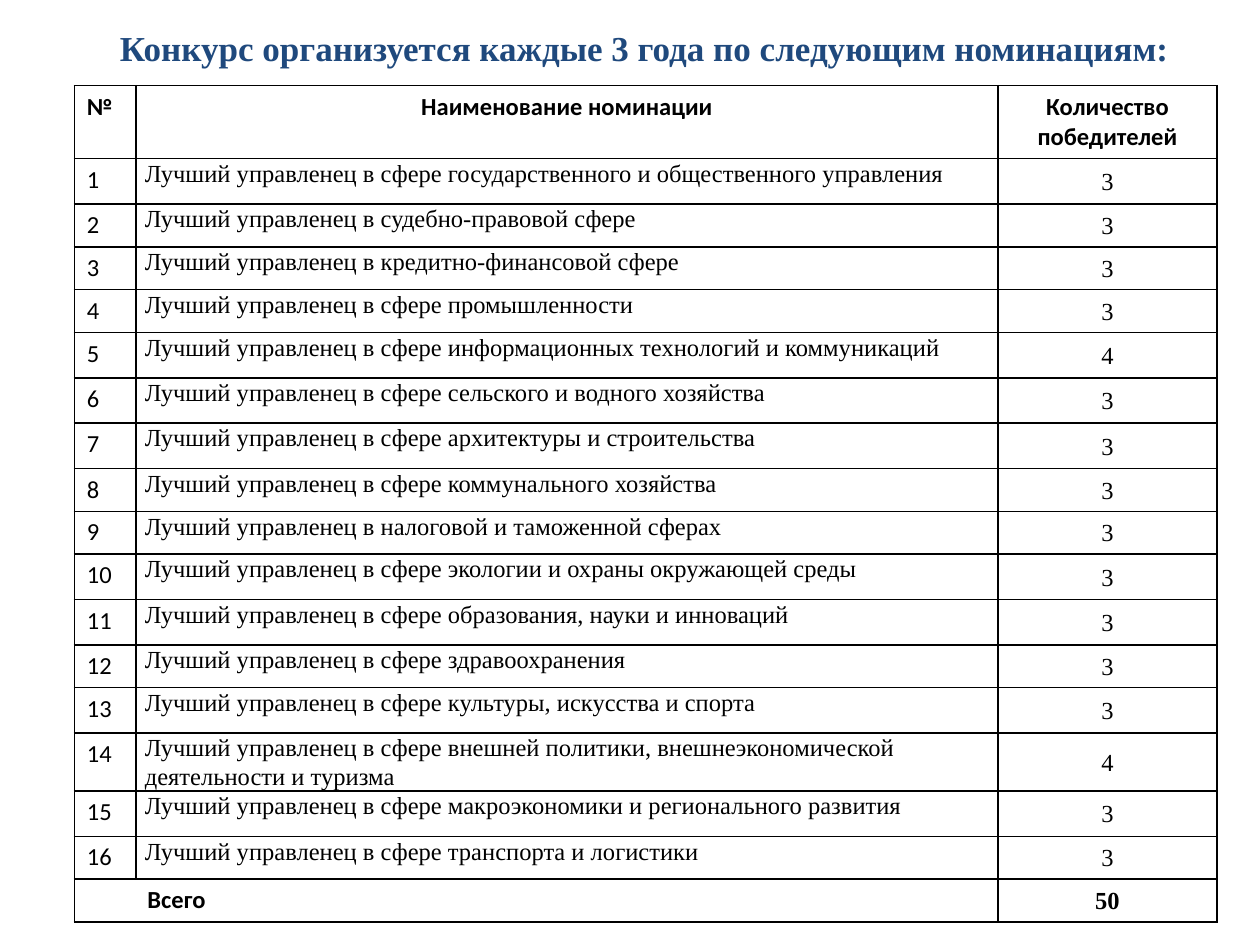
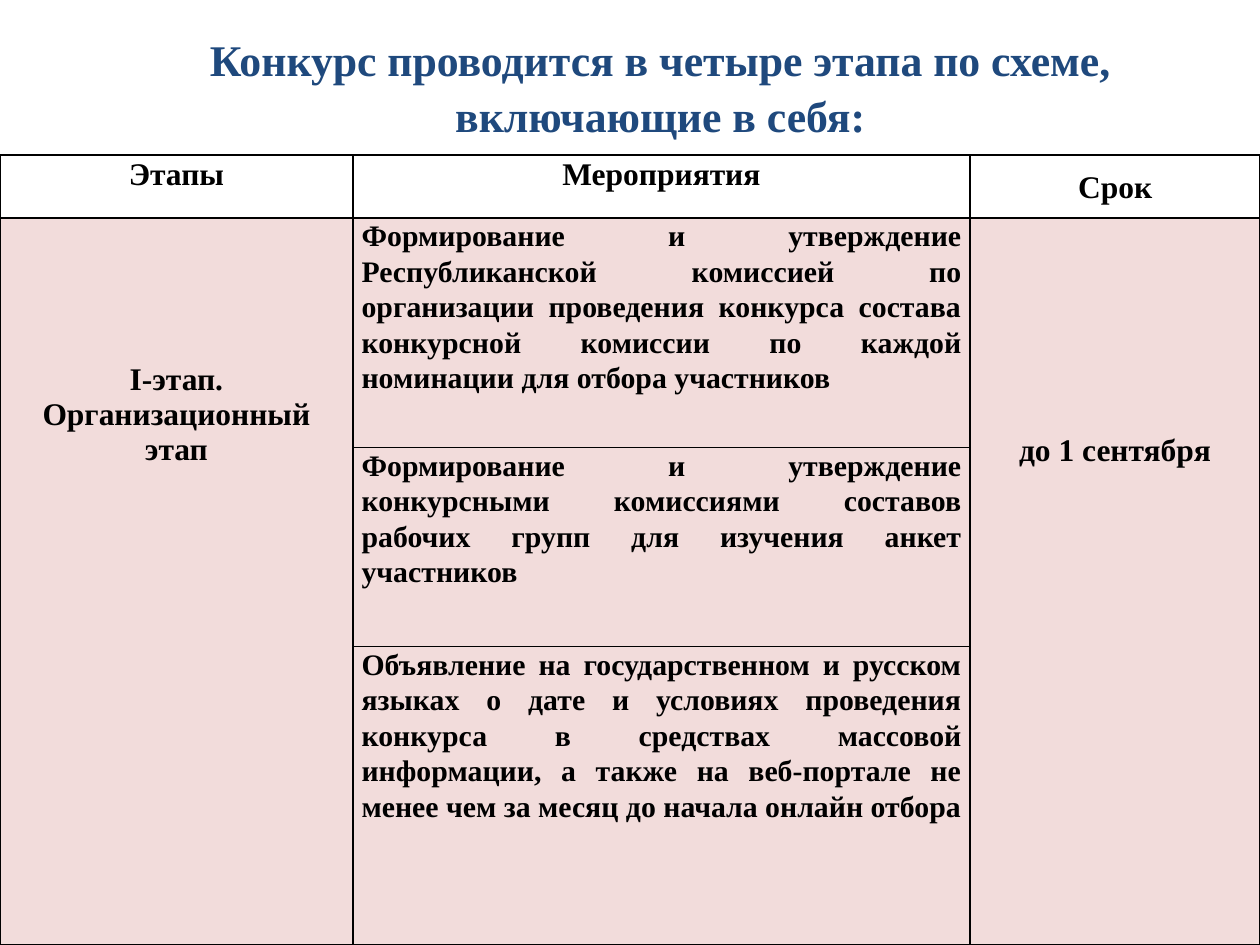
from pptx import Presentation
from pptx.dml.color import RGBColor
from pptx.enum.text import MSO_ANCHOR as Anchor, MSO_AUTO_SIZE as AutoSize, PP_ALIGN as Align
from pptx.oxml import parse_xml
from pptx.oxml.ns import nsdecls
from pptx.util import Inches, Pt

# Shared look
BLACK = RGBColor(0x00, 0x00, 0x00)
NAVY = RGBColor(0x1F, 0x49, 0x7D)
PINK = RGBColor(0xF2, 0xDC, 0xDB)
SERIF, SANS = "Times New Roman", "Calibri"
TIGHT = (0.07, 0, 0.07, 0)
ROOMY = (0.1, 0.05, 0.1, 0.05)

# Slide 1: nominations
NOMINATIONS_TITLE = "Конкурс организуется каждые 3 года по cледующим номинациям:"
NOMINATIONS_HEADER = ("№", "Наименование номинации", "Количество победителей")
NOMINATIONS = [  # name, winners, row height
    ("Лучший управленец в сфере государственного и общественного управления", 3, 0.36),
    ("Лучший управленец в судебно-правовой сфере", 3, 0.34),
    ("Лучший управленец в кредитно-финансовой сфере", 3, 0.34),
    ("Лучший управленец в сфере промышленности", 3, 0.34),
    ("Лучший управленец в сфере информационных технологий и коммуникаций", 4, 0.36),
    ("Лучший управленец в сфере сельского и водного хозяйства", 3, 0.36),
    ("Лучший управленец в сфере архитектуры и строительства", 3, 0.36),
    ("Лучший управленец в сфере коммунального хозяйства", 3, 0.34),
    ("Лучший управленец в налоговой и таможенной сферах", 3, 0.34),
    ("Лучший управленец в сфере экологии и охраны окружающей среды", 3, 0.36),
    ("Лучший управленец в сфере образования, науки и инноваций", 3, 0.36),
    ("Лучший управленец в сфере здравоохранения", 3, 0.34),
    ("Лучший управленец в сфере культуры, искусства и спорта", 3, 0.36),
    ("Лучший управленец в сфере внешней политики, внешнеэкономической "
     "деятельности и туризма", 4, 0.46),
    ("Лучший управленец в сфере макроэкономики и регионального развития", 3, 0.36),
    ("Лучший управленец в сфере транспорта и логистики", 3, 0.34),
]
TOTAL_LABEL = "Всего"

# Slide 2: stages
STAGES_TITLE = "Конкурс проводится в четыре этапа по схеме, включающие в себя:"
STAGES_HEADER = ("Этапы", "Мероприятия", "Срок")
STAGE = "I-этап.\nОрганизационный этап"
DEADLINE = "до 1 сентября"
ACTIVITIES = [
    "Формирование и утверждение Республиканской комиссией по организации проведения "
    "конкурса состава конкурсной комиссии по каждой номинации для отбора участников",
    "Формирование и утверждение конкурсными комиссиями составов рабочих групп "
    "для изучения анкет участников",
    "Объявление на государственном и русском языках о дате и условиях проведения конкурса "
    "в средствах массовой информации, а также на веб-портале не менее чем за месяц "
    "до начала онлайн отбора",
]


def style_font(font, name, size, color, bold):
    font.name, font.size, font.bold = name, Pt(size), bold
    font.color.rgb = color


def add_titled_slide(deck, title, bounds, size, anchor=Anchor.MIDDLE, spacing=1.0):
    slide = deck.slides.add_slide(deck.slide_layouts[5])
    box = slide.shapes.title
    box.left, box.top, box.width, box.height = map(Inches, bounds)
    frame = box.text_frame
    frame.text = title
    frame.word_wrap, frame.auto_size = True, AutoSize.NONE
    frame.vertical_anchor = anchor
    frame.margin_top = frame.margin_bottom = 0
    para = frame.paragraphs[0]
    para.alignment, para.line_spacing = Align.CENTER, spacing
    style_font(para.font, SERIF, size, NAVY, True)
    return slide


def add_grid(slide, left, top, widths, heights):
    """Add an unfilled table with thin black borders."""
    frame = slide.shapes.add_table(len(heights), len(widths), Inches(left), Inches(top),
                                   Inches(sum(widths)), Inches(sum(heights)))
    table = frame.table
    table.first_row = table.horz_banding = False
    for column, width in zip(table.columns, widths):
        column.width = Inches(width)
    for row, height in zip(table.rows, heights):
        row.height = Inches(height)
    for cell in table.iter_cells():
        properties = cell._tc.get_or_add_tcPr()
        for side in ("lnL", "lnR", "lnT", "lnB"):
            properties.append(parse_xml(
                f'<a:{side} {nsdecls("a")} w="12700"><a:solidFill>'
                f'<a:srgbClr val="{BLACK}"/></a:solidFill></a:{side}>'))
        cell.fill.background()
    return table


def fill_cell(cell, text, size, font=SERIF, bold=False, align=Align.LEFT,
              anchor=Anchor.TOP, insets=TIGHT, spacing=1.07, fill=None):
    cell.text = str(text)
    cell.vertical_anchor = anchor
    (cell.margin_left, cell.margin_top,
     cell.margin_right, cell.margin_bottom) = map(Inches, insets)
    if fill is not None:
        cell.fill.solid()
        cell.fill.fore_color.rgb = fill
    for para in cell.text_frame.paragraphs:
        para.alignment, para.line_spacing = align, spacing
        style_font(para.font, font, size, BLACK, bold)


def build_nominations(deck):
    slide = add_titled_slide(deck, NOMINATIONS_TITLE, (0.51, 0.21, 9.21, 0.63), 20, Anchor.TOP)
    heights = [0.58, *(height for _, _, height in NOMINATIONS), 0.34]
    table = add_grid(slide, 0.59, 0.68, (0.49, 6.84, 1.74), heights)
    label = dict(size=14, font=SANS, insets=ROOMY, spacing=1.0)
    count = dict(size=14, align=Align.CENTER, anchor=Anchor.MIDDLE)

    for column, text in enumerate(NOMINATIONS_HEADER):
        align = Align.CENTER if column else Align.LEFT
        fill_cell(table.cell(0, column), text, bold=True, align=align, **label)
    for number, (name, winners, _) in enumerate(NOMINATIONS, start=1):
        fill_cell(table.cell(number, 0), number, **label)
        fill_cell(table.cell(number, 1), name, 14)
        fill_cell(table.cell(number, 2), winners, **count)

    # Total row
    last = len(NOMINATIONS) + 1
    table.cell(last, 0).merge(table.cell(last, 1))
    label["insets"] = (0.58, 0.05, 0.1, 0.05)
    fill_cell(table.cell(last, 0), TOTAL_LABEL, bold=True, **label)
    total = sum(winners for _, winners, _ in NOMINATIONS)
    fill_cell(table.cell(last, 2), total, bold=True, **count)


def build_stages(deck):
    slide = add_titled_slide(deck, STAGES_TITLE, (0.91, 0.21, 8.66, 0.93), 25, spacing=1.07)
    table = add_grid(slide, 0, 1.23, (2.8, 4.9, 2.3), (0.5, 1.82, 1.58, 2.37))

    anchors = (Anchor.TOP, Anchor.TOP, Anchor.MIDDLE)
    for column, (text, anchor) in enumerate(zip(STAGES_HEADER, anchors)):
        fill_cell(table.cell(0, column), text, 18, bold=True, align=Align.CENTER, anchor=anchor)
    for row, text in enumerate(ACTIVITIES, start=1):
        fill_cell(table.cell(row, 1), text, 17, bold=True, align=Align.JUSTIFY, fill=PINK)

    # Stage and deadline span all activities
    for column, text, drop in ((0, STAGE, 1.15), (2, DEADLINE, 1.71)):
        cell = table.cell(1, column)
        cell.merge(table.cell(len(ACTIVITIES), column))
        fill_cell(cell, text, 18, bold=True, align=Align.CENTER,
                  insets=(0.1, drop, 0.1, 0.05), spacing=1.0, fill=PINK)


def main():
    deck = Presentation()
    deck.slide_width, deck.slide_height = Inches(10), Inches(7.5)
    build_nominations(deck)
    build_stages(deck)
    deck.save("out.pptx")


if __name__ == "__main__":
    main()
